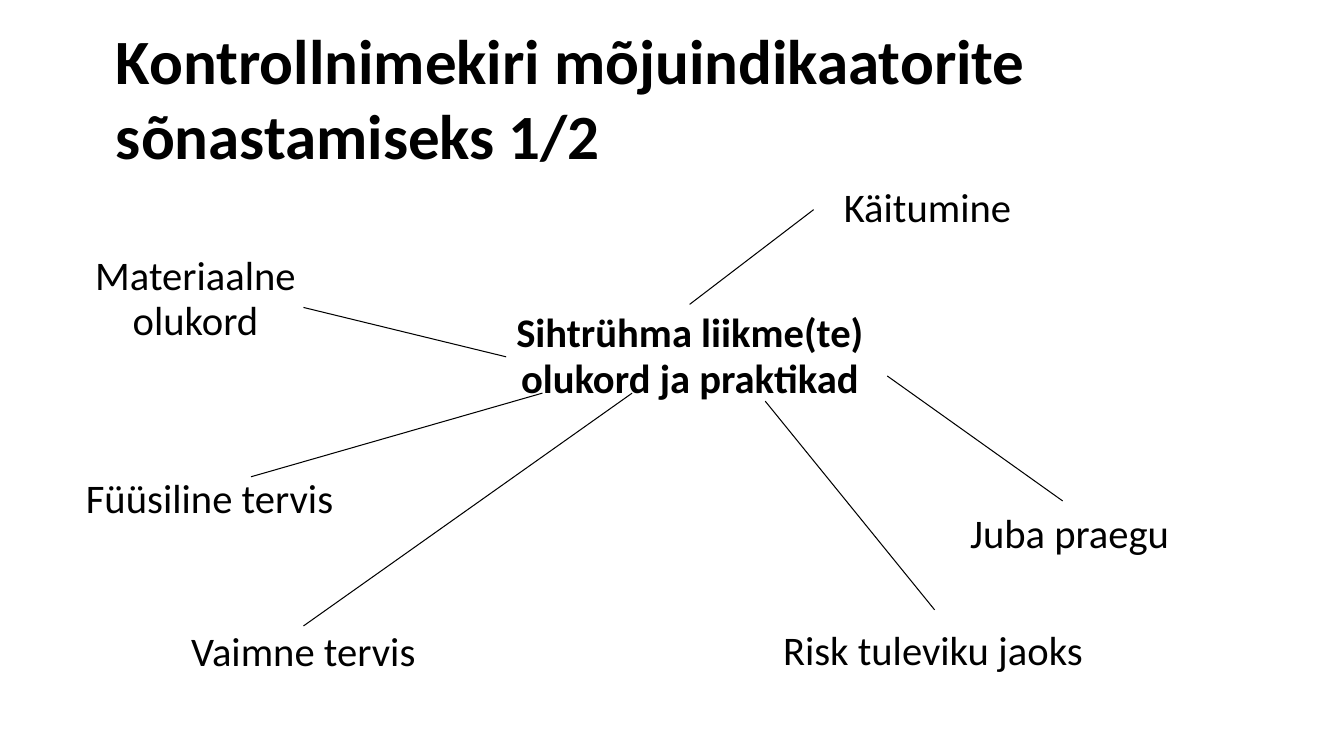
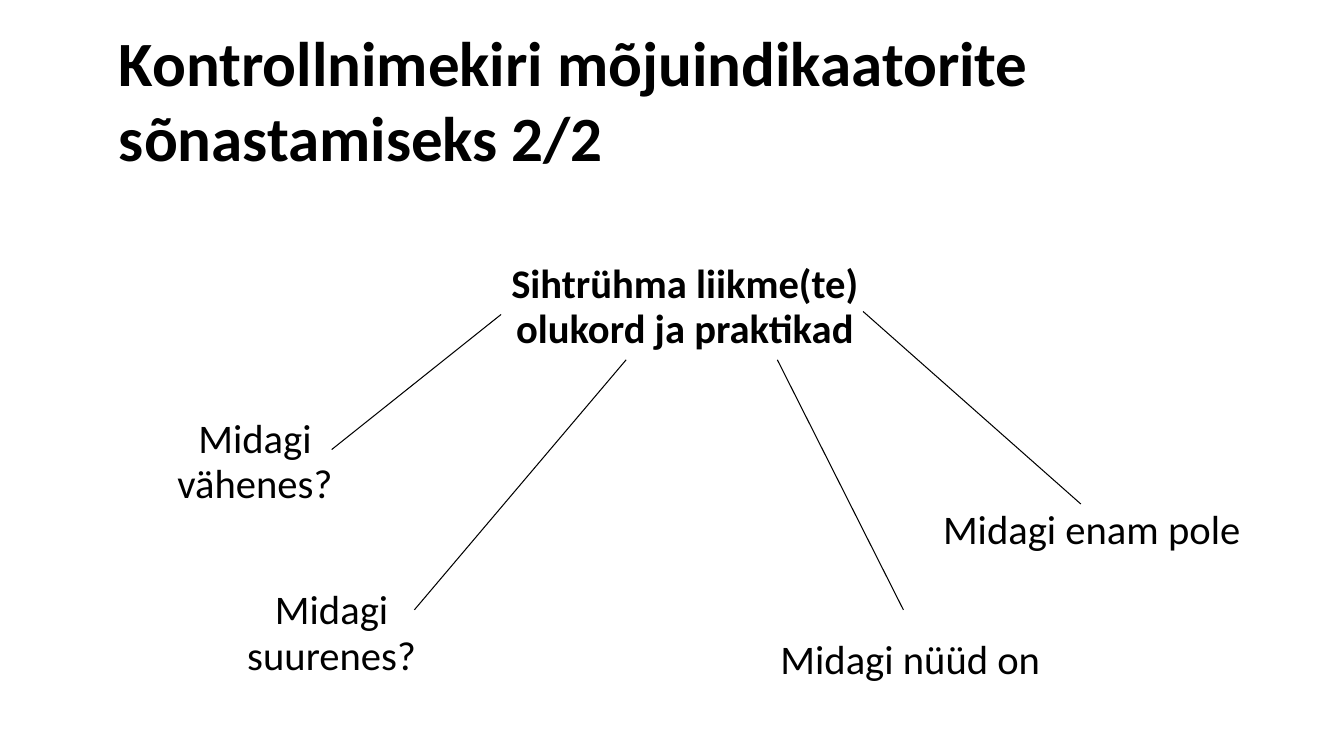
from lxml import etree
from pptx import Presentation
from pptx import util as u
from pptx.dml import color
from pptx.enum import shapes, text
from pptx.oxml import ns

PX = 9144
FONT = "Calibri"
COLOURS = {"ink": "000000", "paper": "FFFFFF"}
TITLE = "Kontrollnimekiri mõjuindikaatorite sõnastamiseks"
HUB = "Sihtrühma liikme(te) olukord ja praktikad"

MAPS = [
    {
        "title": (f"{TITLE} 1/2", (105, 15, 1220, 162)),
        "hub_box": (461, 305, 447, 99),
        "branches": [
            ("Materiaalne olukord", (51, 248, 286, 54), (502, 354), (301, 305)),
            ("Füüsiline tervis", (65, 469, 286, 54), (538, 390), (249, 473)),
            ("Vaimne tervis", (158, 621, 286, 104), (627, 390), (301, 621)),
            ("Käitumine", (786, 181, 268, 54), (684, 302), (807, 208)),
            ("Juba praegu", (927, 504, 268, 54), (880, 373), (1054, 497)),
            ("Risk tuleviku jaoks", (756, 620, 339, 54), (759, 398), (927, 605)),
        ],
    },
    {
        "title": (f"{TITLE} 2/2", (108, 17, 1220, 162)),
        "hub_box": (456, 256, 447, 99),
        "branches": [
            ("Midagi vähenes?", (110, 410, 286, 54), (497, 312), (329, 446)),
            ("Midagi suurenes?", (186, 580, 286, 54), (621, 357), (411, 605)),
            ("Midagi enam pole", (903, 500, 360, 44), (856, 309), (1072, 500)),
            ("Midagi nüüd on", (734, 629, 338, 55), (771, 357), (896, 605)),
        ],
    },
]


def px(*lengths):
    """Turn px lengths into EMU."""
    return [u.Emu(length * PX) for length in lengths]


def ink():
    """Return the colour of text and lines."""
    return color.RGBColor.from_string(COLOURS["ink"])


def style_text(paragraph, size, bold, align):
    """Give a paragraph and its runs their look."""
    paragraph.alignment = align
    for run in paragraph.runs:
        run.font.name = FONT
        run.font.size = u.Pt(size)
        run.font.bold = bold
        run.font.color.rgb = ink()


def place_title(slide, wording, box):
    """Fill and move the title placeholder."""
    title = slide.shapes.title
    title.left, title.top, title.width, title.height = px(*box)
    frame = title.text_frame
    frame.text = wording
    frame.word_wrap = True
    frame.auto_size = text.MSO_AUTO_SIZE.SHAPE_TO_FIT_TEXT
    frame.vertical_anchor = text.MSO_ANCHOR.MIDDLE
    style_text(frame.paragraphs[0], 45, True, text.PP_ALIGN.LEFT)


def add_label(slide, wording, box, bold=False):
    """Add one centred label of the mind map."""
    label = slide.shapes.add_textbox(*px(*box))
    frame = label.text_frame
    frame.text = wording
    frame.word_wrap = True
    frame.margin_left, frame.margin_right = px(9, 9)
    frame.margin_top, frame.margin_bottom = px(4, 4)
    frame.paragraphs[0].line_spacing = 0.93
    style_text(frame.paragraphs[0], 29, bold, text.PP_ALIGN.CENTER)
    return label


def add_branch(slide, wording, box, start, tip):
    """Add a label and the line that leads to it from the hub."""
    label = add_label(slide, wording, box)
    spoke = slide.shapes.add_connector(
        shapes.MSO_CONNECTOR.STRAIGHT, *px(*start, *tip))
    spoke.line.color.rgb = ink()
    spoke.line.width = u.Pt(0.75)
    etree.SubElement(spoke._element.spPr, ns.qn("a:effectLst"))
    left, top, width, _ = box
    if tip == (left + width / 2, top):
        spoke.end_connect(label, 0)


def build_map(deck, title, hub_box, branches):
    """Build one mind map slide."""
    slide = deck.slides.add_slide(deck.slide_layouts[5])
    place_title(slide, *title)
    add_label(slide, HUB, hub_box, bold=True)
    for branch in branches:
        add_branch(slide, *branch)


def main():
    """Build and save the deck."""
    deck = Presentation()
    deck.slide_width, deck.slide_height = px(1333, 750)
    paper = deck.slide_master.background.fill
    paper.solid()
    paper.fore_color.rgb = color.RGBColor.from_string(COLOURS["paper"])
    for mind_map in MAPS:
        build_map(deck, **mind_map)
    deck.save("out.pptx")


if __name__ == "__main__":
    main()
